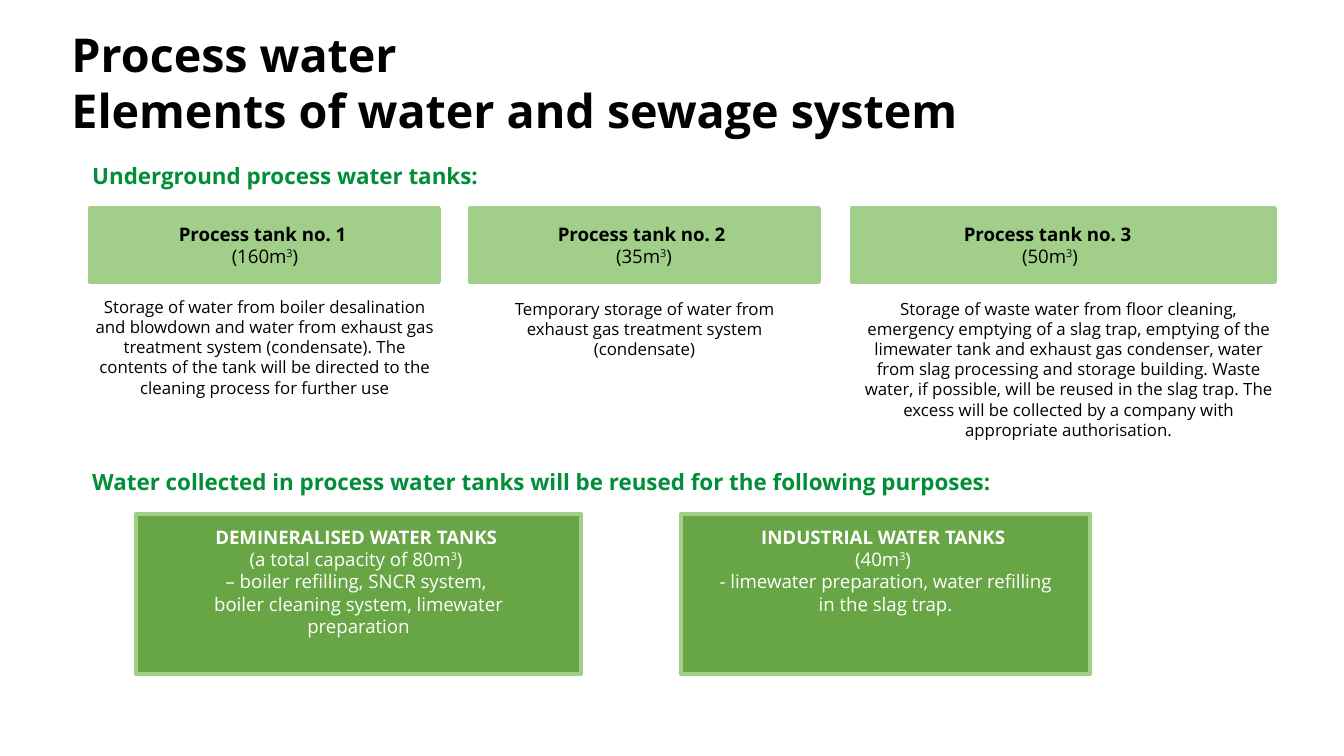
from pptx import Presentation
from pptx import util as u
from pptx.dml.color import RGBColor
from pptx.enum import shapes, text

PX = 914400 / 134.4
FONT = "Open Sans"
BLACK, WHITE, GREEN = "000000", "FFFFFF", "008F38"
LIGHT, MID = "A1CE88", "67A545"
LEFT, MIDDLE, JUST = text.PP_ALIGN.LEFT, text.PP_ALIGN.CENTER, text.PP_ALIGN.JUSTIFY

TITLE = ["Process water", "Elements of water and sewage system"]
HEADS = [
    ("Underground process water tanks:", (79, 156, 519, 42)),
    ("Water collected in process water tanks will be reused for the "
     "following purposes:", (79, 462, 1210, 43)),
]
# name, volume, bar (left, width), label left, use, use box
TANKS = [
    ("Process tank no. 1 ", "(160m", (90, 349), 85,
     "Storage of water from boiler desalination and blowdown and water from "
     "exhaust gas treatment system (condensate). The contents of the tank will "
     "be directed to the cleaning process for further use",
     (79, 290, 371, 161)),
    ("Process tank no. 2 ", "(35m", (470, 349), 464,
     "Temporary storage of water from exhaust gas treatment system (condensate)",
     (470, 292, 349, 117)),
    ("Process tank no. 3 ", "(50m", (852, 423), 870,
     "Storage of waste water from floor cleaning, emergency emptying of a slag "
     "trap, emptying of the limewater tank and exhaust gas condenser, water from "
     "slag processing and storage building. Waste water, if possible, will be "
     "reused in the slag trap. The excess will be collected by a company with "
     "appropriate authorisation.",
     (848, 292, 441, 192)),
]
# name, volume, uses, panel (left, width)
REUSE = [
    ("DEMINERALISED WATER TANKS ", "(a total capacity of 80m",
     ["– boiler refilling, SNCR system, ",
      "boiler cleaning system, limewater preparation"], (136, 445)),
    ("INDUSTRIAL WATER TANKS ", "(40m",
     ["- limewater preparation, water refilling in the slag trap."], (681, 409)),
]


def px(*vals):
    return [u.Emu(round(v * PX)) for v in vals]


def rgb(code):
    return RGBColor.from_string(code)


def write(frame, lines, size, color, align, bold=0):
    """Fill a frame; the first `bold` lines are bold, a tuple line has a raised middle."""
    frame.word_wrap = True
    for i, line in enumerate(lines):
        para = frame.paragraphs[0] if i == 0 else frame.add_paragraph()
        para.alignment = align
        para.line_spacing = u.Pt(size * 1.2)
        parts = line if isinstance(line, tuple) else (line,)
        for j, part in enumerate(parts):
            run = para.add_run()
            run.text = part
            font = run.font
            font.name, font.size, font.bold = FONT, u.Pt(size), i < bold
            font.color.rgb = rgb(color)
            if j == 1:
                run._r.get_or_add_rPr().set("baseline", "30000")


def label(slide, box, *args, **opts):
    write(slide.shapes.add_textbox(*px(*box)).text_frame, *args, **opts)


def panel(slide, box, fill):
    rect = slide.shapes.add_shape(shapes.MSO_SHAPE.RECTANGLE, *px(*box))
    rect.shadow.inherit = False
    rect.fill.solid()
    rect.fill.fore_color.rgb = rgb(fill)
    rect.line.color.rgb = rgb(LIGHT)
    rect.line.width = u.Pt(2)


def main():
    deck = Presentation()
    deck.slide_width, deck.slide_height = px(1344, 756)
    slide = deck.slides.add_slide(deck.slide_layouts[5])

    title = slide.shapes.title
    title.left, title.top, title.width, title.height = px(58, 19, 1210, 126)
    title.text_frame.vertical_anchor = text.MSO_ANCHOR.MIDDLE
    write(title.text_frame, TITLE, 25, BLACK, LEFT, bold=2)

    for head, box in HEADS:
        label(slide, box, [head], 12, GREEN, JUST, bold=1)

    for name, volume, (left, width), start, use, box in TANKS:
        panel(slide, (left, 208, width, 74), LIGHT)
        label(slide, (start, 216, 360, 59), [name, (volume, "3", ")")],
              10, BLACK, MIDDLE, bold=1)
        label(slide, box, [use], 9, BLACK, MIDDLE)

    for name, volume, uses, (left, width) in REUSE:
        panel(slide, (left, 514, width, 160), MID)
        label(slide, (left + 19, 519, width - 38, 156),
              [name, (volume, "3", ") "), *uses], 10, WHITE, MIDDLE, bold=1)

    deck.save("out.pptx")


if __name__ == "__main__":
    main()
